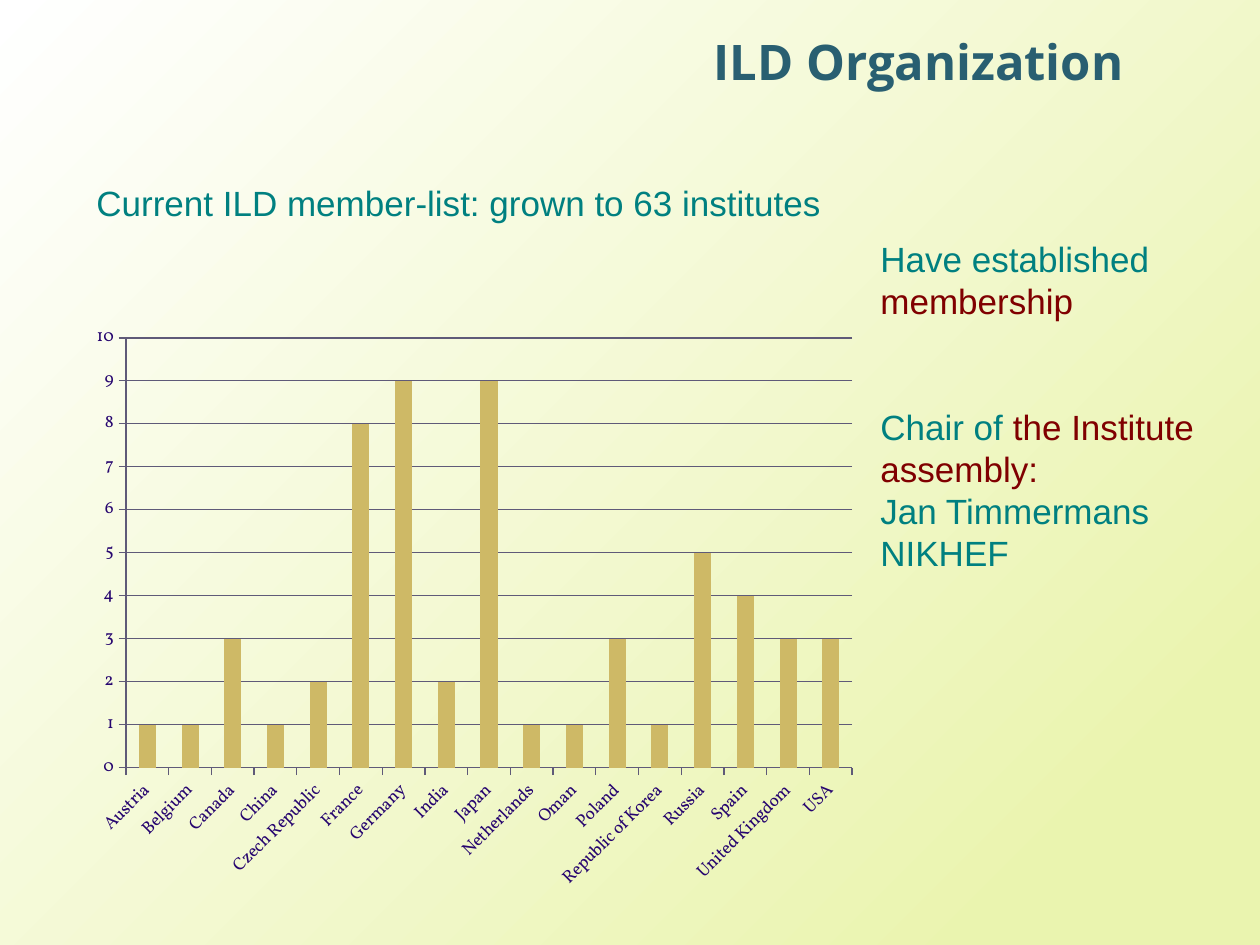
"""Build the ILD organization slide with its member chart."""
from dataclasses import dataclass

from lxml import etree
from pptx import Presentation
from pptx.chart.data import CategoryChartData
from pptx.dml.color import RGBColor
from pptx.enum import chart as charts, text
from pptx.oxml import ns
from pptx.util import Pt

EMU_PER_PX = 914400 / 126
TEAL, MAROON, NAVY = "008080", "800000", "26056F"
GOLD, RULE, TITLE = "CEB966", "5F5A78", "295F71"
LINE_HEIGHT = 24

MEMBERS = {
    "Austria": 1, "Belgium": 1, "Canada": 3, "China": 1, "Czech Republic": 2,
    "France": 8, "Germany": 9, "India": 2, "Japan": 9, "Netherlands": 1,
    "Oman": 1, "Poland": 3, "Republic of Korea": 1, "Russia": 5, "Spain": 4,
    "United Kingdom": 3, "USA": 3,
}


@dataclass(frozen=True)
class Span:
    words: str
    colour: str = TEAL
    break_after: bool = False


@dataclass(frozen=True)
class Para:
    spans: tuple[Span, ...]
    lines_before: int = 0


@dataclass(frozen=True)
class Frame:
    left: int
    top: int
    width: int
    height: int

    def emu(self) -> tuple[int, ...]:
        return tuple(px(n) for n in (self.left, self.top, self.width, self.height))


@dataclass(frozen=True)
class Note:
    frame: Frame
    paras: tuple[Para, ...]


CHART = Frame(82, 315, 786, 588)
PLOT = Frame(126, 338, 726, 430)
HEADING = Frame(591, 16, 655, 90)
NOTES = (
    Note(Frame(84, 175, 756, 55), (
        Para((Span("Current ILD member-list: grown to 63 institutes"),)),
    )),
    Note(Frame(868, 231, 341, 352), (
        Para((Span("Have established ", break_after=True), Span("membership", MAROON))),
        Para((Span("Chair of "), Span("the Institute", MAROON, True),
              Span("assembly:", MAROON)), lines_before=2),
        Para((Span("Jan Timmermans"),)),
        Para((Span("NIKHEF"),)),
    )),
)


def px(length: int) -> int:
    """Turn pixels into EMU."""
    return round(length * EMU_PER_PX)


def rgb(colour: str) -> RGBColor:
    """Turn a hex string into a colour."""
    return RGBColor.from_string(colour)


def style_font(font, name: str, size: int, colour: str, bold: bool = False) -> None:
    """Set the face, size and colour of a font."""
    font.name, font.size, font.bold = name, Pt(size), bold
    font.color.rgb = rgb(colour)


def paint_background(page) -> None:
    """Spread a radial gradient from the bottom right corner."""
    fill = page.background.fill
    fill.gradient()
    for stop, (position, colour) in zip(
            fill.gradient_stops, ((0.13, "EAF4AF"), (1, "FFFFFF"))):
        stop.position = position
        stop.color.rgb = rgb(colour)
    gradient = page.element.find(".//" + ns.qn("a:gradFill"))
    linear = gradient.find(ns.qn("a:lin"))
    radial = etree.Element(ns.qn("a:path"), path="circle")
    etree.SubElement(radial, ns.qn("a:fillToRect"), l="100000", t="100000")
    gradient.replace(linear, radial)


def add_heading(page) -> None:
    """Move and fill the title placeholder."""
    title = page.shapes.title
    title.left, title.top, title.width, title.height = HEADING.emu()
    title.text_frame.vertical_anchor = text.MSO_ANCHOR.MIDDLE
    para = title.text_frame.paragraphs[0]
    para.alignment = text.PP_ALIGN.CENTER
    span = para.add_run()
    span.text = "ILD Organization"
    style_font(span.font, "Open Sans", 28, TITLE, True)


def add_note(page, note: Note) -> None:
    """Write a text box run by run."""
    frame = page.shapes.add_textbox(*note.frame.emu()).text_frame
    frame.word_wrap = False
    frame.auto_size = text.MSO_AUTO_SIZE.SHAPE_TO_FIT_TEXT
    for index, item in enumerate(note.paras):
        para = frame.add_paragraph() if index else frame.paragraphs[0]
        para.line_spacing = Pt(LINE_HEIGHT)
        if item.lines_before:
            para.space_before = Pt(item.lines_before * LINE_HEIGHT)
        for part in item.spans:
            span = para.add_run()
            span.text = part.words
            style_font(span.font, "Arial", 20, part.colour)
            if part.break_after:
                para.add_line_break()


def style_rule(line) -> None:
    """Give an axis or grid line its colour and width."""
    line.color.rgb = rgb(RULE)
    line.width = Pt(0.75)


def place_plot(chart) -> None:
    """Fix the inner plot area inside the chart frame."""
    area = chart.element.find(".//" + ns.qn("c:plotArea"))
    layout = area.find(ns.qn("c:layout"))
    if layout is None:
        layout = etree.Element(ns.qn("c:layout"))
        area.insert(0, layout)
    manual = etree.SubElement(layout, ns.qn("c:manualLayout"))
    settings = {
        "layoutTarget": "inner", "xMode": "edge", "yMode": "edge",
        "x": round((PLOT.left - CHART.left) / CHART.width, 3),
        "y": round((PLOT.top - CHART.top) / CHART.height, 3),
        "w": round(PLOT.width / CHART.width, 3),
        "h": round(PLOT.height / CHART.height, 3),
    }
    for name, value in settings.items():
        etree.SubElement(manual, ns.qn("c:" + name), val=str(value))


def add_member_chart(page) -> None:
    """Draw the institutes per country as columns."""
    data = CategoryChartData()
    data.categories = list(MEMBERS)
    data.add_series("Series 1", list(MEMBERS.values()))
    chart = page.shapes.add_chart(
        charts.XL_CHART_TYPE.COLUMN_CLUSTERED, *CHART.emu(), data).chart
    chart.has_legend = chart.has_title = False
    style_font(chart.font, "Vollkorn", 10, NAVY)
    place_plot(chart)

    plot = chart.plots[0]
    plot.gap_width, plot.vary_by_categories = 150, False
    columns = plot.series[0].format.fill
    columns.solid()
    columns.fore_color.rgb = rgb(GOLD)

    for axis in (chart.category_axis, chart.value_axis):
        axis.major_tick_mark = charts.XL_TICK_MARK.OUTSIDE
        axis.minor_tick_mark = charts.XL_TICK_MARK.NONE
        style_rule(axis.format.line)
        style_font(axis.tick_labels.font, "Vollkorn", 10, NAVY)
    steps = (ns.qn(tag) for tag in ("c:catAx", "c:txPr", "a:bodyPr"))
    labels = chart.element.find(".//" + "/".join(steps))
    labels.set("rot", "-2700000")
    labels.set("vert", "horz")
    scale = chart.value_axis
    scale.minimum_scale, scale.maximum_scale, scale.major_unit = 0, 10, 1
    scale.has_major_gridlines = True
    style_rule(scale.major_gridlines.format.line)


def main() -> None:
    """Assemble and save the deck."""
    deck = Presentation()
    deck.slide_width, deck.slide_height = px(1260), px(945)
    page = deck.slides.add_slide(deck.slide_layouts[5])
    paint_background(page)
    add_member_chart(page)
    add_heading(page)
    for note in NOTES:
        add_note(page, note)
    deck.save("out.pptx")


if __name__ == "__main__":
    main()
